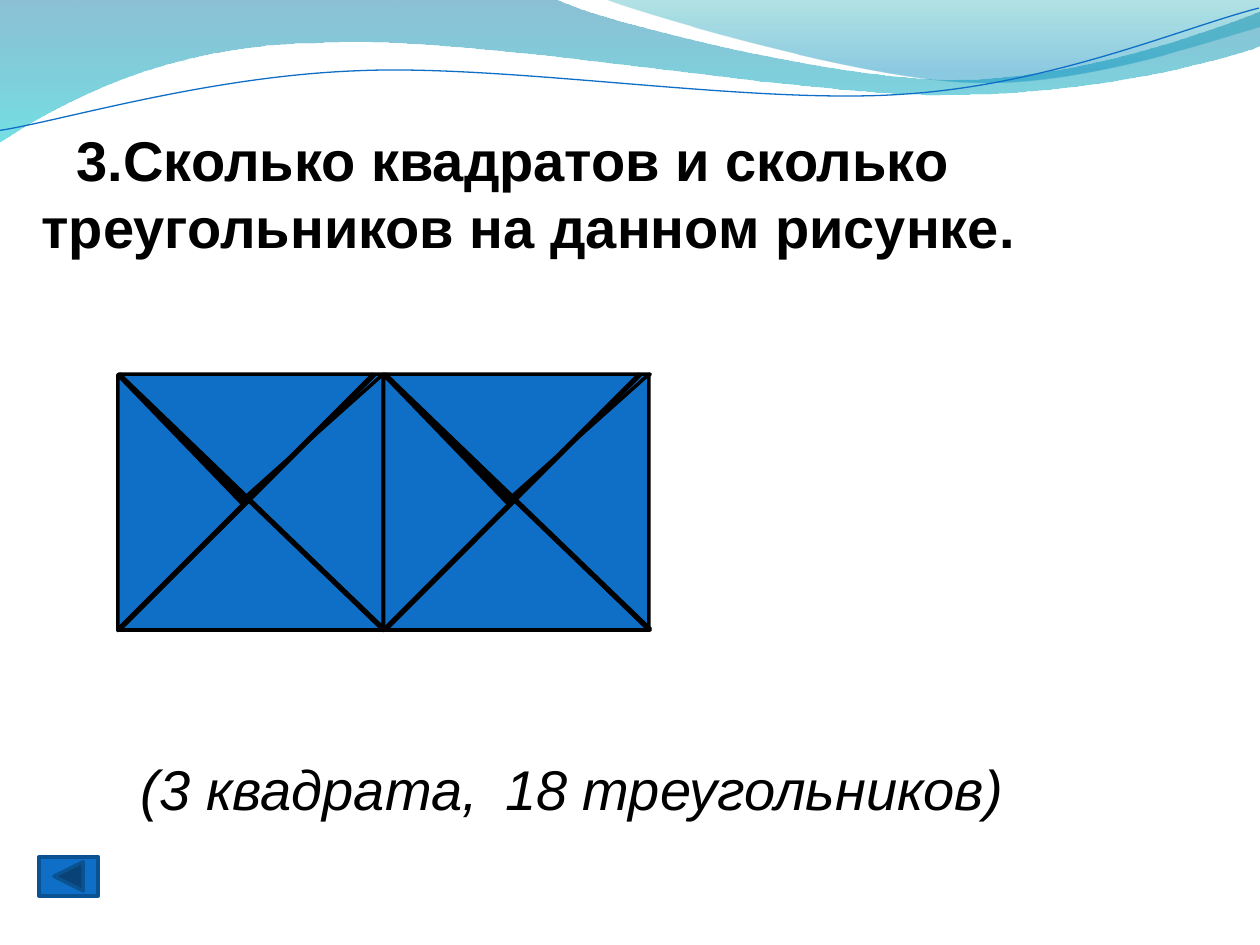
from dataclasses import dataclass

from pptx import Presentation
from pptx import util as u
from pptx.dml.color import RGBColor
from pptx.enum import shapes, text
from pptx.oxml import parse_xml
from pptx.oxml.ns import nsdecls, qn

BLACK = RGBColor(0x00, 0x00, 0x00)
BLUE = RGBColor(0x0F, 0x6F, 0xC6)
DARK_BLUE = RGBColor(0x0B, 0x52, 0x92)
DEEP_TEAL = RGBColor(0x00, 0x74, 0xA1)
CYAN = RGBColor(0x00, 0xC6, 0xCF)
TEAL = RGBColor(0x00, 0xA1, 0xA9)
SKY = RGBColor(0x00, 0x8B, 0xBF)

PANEL_LEFT = 0.94
PANEL_WIDTH = 2.11
PANEL_TOP = 2.97
PANEL_BOTTOM = 5.0


@dataclass
class Stop:
    position: float
    color: RGBColor
    opacity: int


@dataclass
class Wave:
    start: tuple
    segments: list
    stops: tuple = ()
    rotation: float = 0


@dataclass
class Triangle:
    left: float
    top: float
    width: float
    height: float
    rotation: int


@dataclass
class Answer:
    wording: str
    left: float
    width: float
    wrap: bool


WAVES = [
    Wave((0, -0.01),
         [(4.4, -0.01),
          (4.76, 0.17, 6.64, 0.63, 7.58, 0.63),
          (8.53, 0.63, 9.58, 0.26, 10, 0.09), (10.01, 0.36),
          (9.83, 0.44, 8.7, 0.76, 7.46, 0.75),
          (6.22, 0.75, 3.82, 0.28, 2.57, 0.34),
          (1.29, 0.35, 0.46, 0.83, -0.01, 1.13), (0, -0.01)],
         (Stop(0, DEEP_TEAL, 45), Stop(1, CYAN, 55))),
    Wave((4.79, -0.01),
         [(5.09, 0.11, 6.82, 0.62, 7.69, 0.65),
          (8.56, 0.69, 9.61, 0.32, 10, 0.21), (10, 0), (4.79, -0.01)],
         (Stop(0, TEAL, 30), Stop(0.8, SKY, 45))),
    Wave((-0.02, 0.8),
         [(0.46, 0.75, 1.64, 0.45, 2.83, 0.46),
          (4.03, 0.46, 5.96, 0.88, 7.16, 0.85),
          (8.35, 0.83, 9.42, 0.42, 10.01, 0.3)],
         rotation=357.3),
]

TRIANGLES = [
    Triangle(0.43, 3.48, 2.03, 1.02, 90),
    Triangle(0.94, 2.97, 2.11, 1.02, 180),
    Triangle(0.94, 3.91, 2.11, 1.09, 0),
    Triangle(1.48, 3.44, 2.03, 1.09, 270),
]

ANSWERS = [
    Answer("(3 квадрата,", 1.02, 3.44, True),
    Answer("18 треугольников)", 3.91, 4.19, False),
]


def bend_segments(shape, segments: list) -> None:
    vertices = iter(list(shape._element.spPr.iter(qn("a:lnTo"))))
    for segment in segments:
        group = [next(vertices) for _ in range(len(segment) // 2)]
        if len(group) == 1:
            continue
        curve = parse_xml(f'<a:cubicBezTo {nsdecls("a")}/>')
        group[0].addprevious(curve)
        for vertex in group:
            curve.append(vertex[0])
            vertex.getparent().remove(vertex)


def draw_wave(slide, wave: Wave) -> None:
    points = [(u.Inches(segment[i]), u.Inches(segment[i + 1]))
              for segment in wave.segments for i in range(0, len(segment), 2)]
    builder = slide.shapes.build_freeform(*map(u.Inches, wave.start), scale=1.0)
    builder.add_line_segments(points, close=bool(wave.stops))
    shape = builder.convert_to_shape()
    bend_segments(shape, wave.segments)
    shape.rotation = wave.rotation
    shape.shadow.inherit = False
    if not wave.stops:
        shape.fill.background()
        shape.line.color.rgb = BLUE
        shape.line.width = u.Pt(0.75)
        return
    shape.line.fill.background()
    shape.fill.gradient()
    shape.fill.gradient_angle = 270
    for gradient_stop, stop in zip(shape.fill.gradient_stops, wave.stops):
        gradient_stop.position = stop.position
        gradient_stop.color.rgb = stop.color
    for color, stop in zip(shape._element.spPr.iter(qn("a:srgbClr")), wave.stops):
        color.append(parse_xml(f'<a:alpha {nsdecls("a")} val="{stop.opacity * 1000}"/>'))


def draw_shape(slide, kind, left: float, top: float, width: float, height: float, line_color: RGBColor):
    shape = slide.shapes.add_shape(kind, u.Inches(left), u.Inches(top), u.Inches(width), u.Inches(height))
    shape.shadow.inherit = False
    shape.fill.solid()
    shape.fill.fore_color.rgb = BLUE
    shape.line.color.rgb = line_color
    shape.line.width = u.Pt(2)
    return shape


def draw_diagonal(slide, top_x: float, bottom_x: float) -> None:
    line = slide.shapes.add_connector(
        shapes.MSO_CONNECTOR.STRAIGHT,
        u.Inches(top_x), u.Inches(PANEL_TOP), u.Inches(bottom_x), u.Inches(PANEL_BOTTOM))
    line.line.color.rgb = BLACK
    line.line.width = u.Pt(3)
    line._element.spPr.append(parse_xml(f'<a:effectLst {nsdecls("a")}/>'))


def draw_panel(slide, offset: float) -> None:
    for triangle in TRIANGLES:
        shape = draw_shape(slide, shapes.MSO_SHAPE.ISOSCELES_TRIANGLE, triangle.left + offset,
                           triangle.top, triangle.width, triangle.height, BLACK)
        shape.adjustments[0] = 0.521
        shape.rotation = triangle.rotation
    left = PANEL_LEFT + offset
    draw_diagonal(slide, left, left + PANEL_WIDTH)
    draw_diagonal(slide, left + 2.03, left)


def format_text(paragraph, bold: bool, italic: bool) -> None:
    paragraph.alignment = text.PP_ALIGN.LEFT
    for run in paragraph.runs:
        run.font.name = "Arial"
        run.font.size = u.Pt(32)
        run.font.bold = bold
        run.font.italic = italic
        run.font.color.rgb = BLACK


def place_title(slide) -> None:
    title = slide.shapes.title
    title.left, title.top = u.Inches(0.23), u.Inches(0.94)
    title.width, title.height = u.Inches(10), u.Inches(1.18)
    frame = title.text_frame
    frame.text = "3.Сколько квадратов и сколько треугольников на данном рисунке."
    frame.vertical_anchor = text.MSO_ANCHOR.MIDDLE
    frame.auto_size = text.MSO_AUTO_SIZE.SHAPE_TO_FIT_TEXT
    paragraph = frame.paragraphs[0]
    paragraph._p.get_or_add_pPr().set("indent", str(u.Inches(0.28)))
    format_text(paragraph, bold=True, italic=False)
    slide.shapes._spTree.append(title._element)


def draw_answer(slide, answer: Answer) -> None:
    box = slide.shapes.add_textbox(u.Inches(answer.left), u.Inches(5.94),
                                   u.Inches(answer.width), u.Inches(0.64))
    frame = box.text_frame
    frame.text = answer.wording
    frame.word_wrap = answer.wrap
    frame.auto_size = text.MSO_AUTO_SIZE.SHAPE_TO_FIT_TEXT
    format_text(frame.paragraphs[0], bold=False, italic=True)


def main() -> None:
    presentation = Presentation()
    presentation.slide_width, presentation.slide_height = u.Inches(10), u.Inches(7.5)
    slide = presentation.slides.add_slide(presentation.slide_layouts[5])
    for wave in WAVES:
        draw_wave(slide, wave)
    place_title(slide)
    for panel in range(2):
        draw_panel(slide, panel * PANEL_WIDTH)
    for answer in ANSWERS:
        draw_answer(slide, answer)
    draw_shape(slide, shapes.MSO_SHAPE.ACTION_BUTTON_BACK_OR_PREVIOUS, 0.31, 6.8, 0.47, 0.31, DARK_BLUE)
    presentation.save("out.pptx")


if __name__ == "__main__":
    main()
